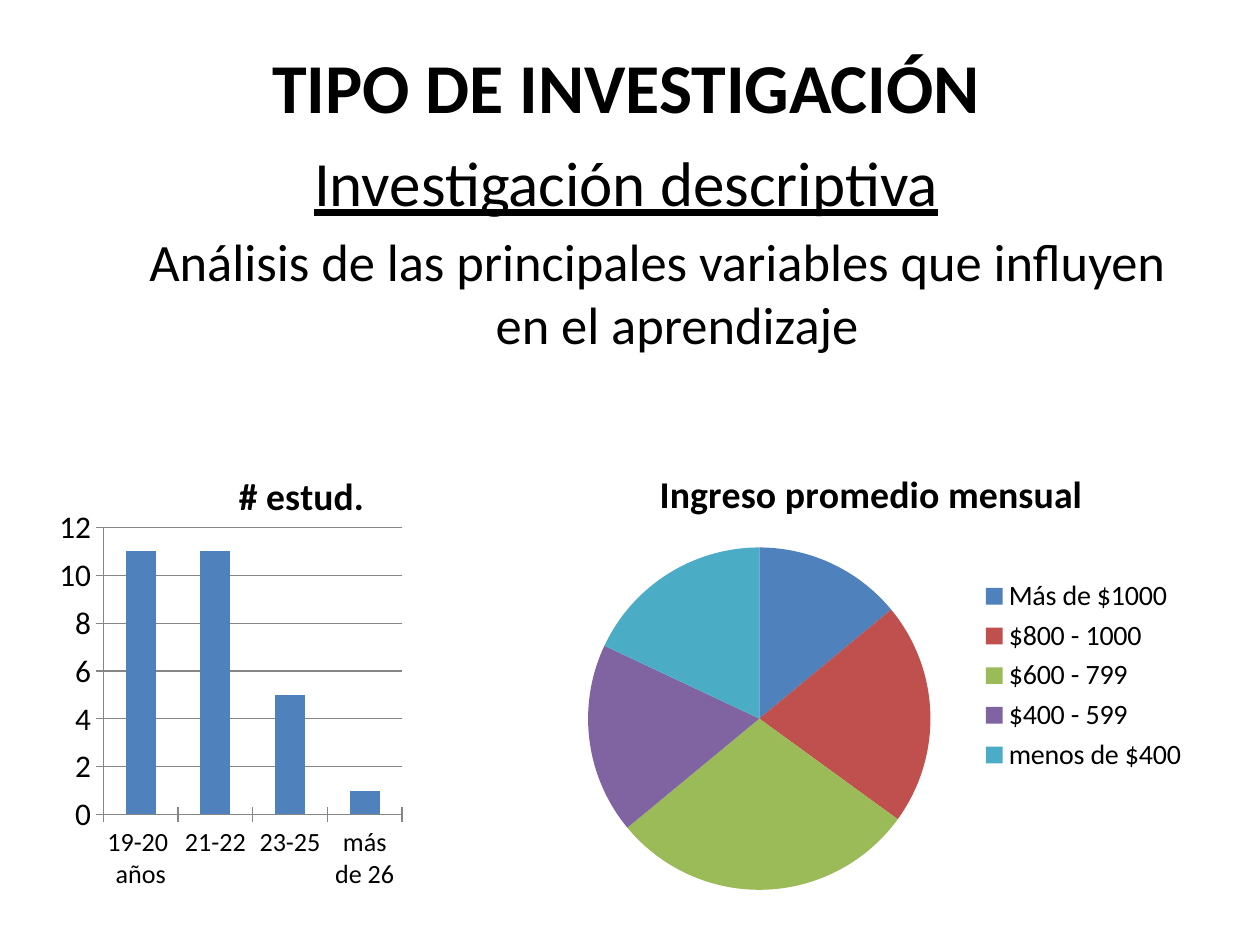
"""Build the research-type slide with a student bar chart and an income pie chart."""
from dataclasses import dataclass

import pptx
import pptx.chart.chart
import pptx.chart.data
import pptx.dml.color
import pptx.enum.chart
import pptx.enum.text
import pptx.oxml.ns
import pptx.slide
import pptx.text.text
import pptx.util
from lxml import etree

WIDTH, HEIGHT = pptx.util.Inches(10), pptx.util.Inches(7.5)
FONT = "Calibri"
BLACK = pptx.dml.color.RGBColor(0x00, 0x00, 0x00)
GRAY = pptx.dml.color.RGBColor(0x86, 0x86, 0x86)
BLUE = pptx.dml.color.RGBColor(0x4F, 0x81, 0xBD)
RED = pptx.dml.color.RGBColor(0xC0, 0x50, 0x4D)
GREEN = pptx.dml.color.RGBColor(0x9B, 0xBB, 0x59)
PURPLE = pptx.dml.color.RGBColor(0x80, 0x64, 0xA2)
AQUA = pptx.dml.color.RGBColor(0x4B, 0xAC, 0xC6)
KINDS = pptx.enum.chart.XL_CHART_TYPE


@dataclass(frozen=True)
class Area:
    """A rectangle given as shares of the slide's width and height."""
    left: float
    top: float
    width: float
    height: float

    def lengths(self) -> tuple[int, int, int, int]:
        """Return left, top, width and height as slide lengths."""
        return (int(self.left * WIDTH), int(self.top * HEIGHT),
                int(self.width * WIDTH), int(self.height * HEIGHT))


@dataclass(frozen=True)
class Line:
    """One centred paragraph and its look."""
    text: str
    size: int
    bold: bool = False
    underline: bool = False
    before: float = 0
    margin: float = 0
    indent: float = 0


@dataclass(frozen=True)
class Graph:
    """One single-series chart."""
    kind: KINDS
    area: Area
    title: str
    series: str
    categories: tuple[str, ...]
    values: tuple[int, ...]


HEADING = Area(0.047, 0.02, 0.9, 0.14)
BODY = Area(0.047, 0.145, 0.9, 0.81)
HEADING_LINES = [Line("TIPO DE INVESTIGACIÓN", 40, bold=True)]
BODY_LINES = [
    Line("Investigación descriptiva", 36, underline=True, margin=0.38, indent=-0.38),
    Line("Análisis de las principales variables que influyen en el aprendizaje",
         30, before=6, margin=0.81, indent=-0.31),
]
STUDENTS = Graph(KINDS.COLUMN_CLUSTERED, Area(0.047, 0.47, 0.367, 0.49),
                 "# estud.", "# estud.",
                 ("19-20  años", "21-22", "23-25", "más de 26"), (11, 11, 5, 1))
INCOME = Graph(KINDS.PIE, Area(0.43, 0.47, 0.523, 0.49),
               "Ingreso promedio mensual", "Series 1",
               ("Más de $1000", "$800 - 1000", "$600 - 799", "$400 - 599", "menos de $400"),
               (14, 21, 29, 18, 18))


def style_font(font: pptx.text.text.Font, size: float, bold: bool = False) -> None:
    """Apply the slide's typeface and colour."""
    font.name, font.size, font.bold = FONT, pptx.util.Pt(size), bold
    font.color.rgb = BLACK


def add_text(page: pptx.slide.Slide, area: Area, lines: list[Line],
             anchor: pptx.enum.text.MSO_ANCHOR) -> None:
    """Add a box of centred paragraphs."""
    frame = page.shapes.add_textbox(*area.lengths()).text_frame
    frame.word_wrap = True
    frame.vertical_anchor = anchor
    for index, line in enumerate(lines):
        para = frame.add_paragraph() if index else frame.paragraphs[0]
        para.text = line.text
        para.alignment = pptx.enum.text.PP_ALIGN.CENTER
        para.space_before = pptx.util.Pt(line.before)
        properties = para._p.get_or_add_pPr()
        properties.set("marL", str(pptx.util.Inches(line.margin)))
        properties.set("indent", str(pptx.util.Inches(line.indent)))
        style_font(para.font, line.size, line.bold)
        para.font.underline = line.underline


def add_graph(page: pptx.slide.Slide, graph: Graph) -> pptx.chart.chart.Chart:
    """Add a titled chart in the slide's typeface."""
    data = pptx.chart.data.CategoryChartData()
    data.categories = graph.categories
    data.add_series(graph.series, graph.values)
    chart = page.shapes.add_chart(graph.kind, *graph.area.lengths(), data).chart
    style_font(chart.font, 18)
    chart.has_title = True
    para = chart.chart_title.text_frame.paragraphs[0]
    para.text = graph.title
    style_font(para.font, 21.6, bold=True)
    chart.has_legend = False
    return chart


def set_layout(parent: etree._Element, shares: dict[str, float], inner: bool = False) -> None:
    """Place a chart part by shares of the chart's size."""
    name = pptx.oxml.ns.qn
    layout = parent.find(name("c:layout"))
    if layout is None:
        layout = etree.Element(name("c:layout"))
        parent.insert(0, layout)
    manual = etree.SubElement(layout, name("c:manualLayout"))
    if inner:
        etree.SubElement(manual, name("c:layoutTarget"), val="inner")
    for side in ("x", "y"):
        etree.SubElement(manual, name(f"c:{side}Mode"), val="edge")
    for side, share in shares.items():
        etree.SubElement(manual, name(f"c:{side}"), val=str(share))


def draw_students(page: pptx.slide.Slide) -> None:
    """Draw the column chart of students by age."""
    chart = add_graph(page, STUDENTS)
    set_layout(chart.chart_title._element, {"x": 0.37, "y": 0.04})
    set_layout(chart._chartSpace.chart.plotArea,
               {"x": 0.09, "y": 0.18, "w": 0.65, "h": 0.62}, inner=True)
    plot = chart.plots[0]
    plot.gap_width = 150
    plot.vary_by_categories = False
    fill = plot.series[0].format.fill
    fill.solid()
    fill.fore_color.rgb = BLUE
    chart.value_axis.maximum_scale = 12
    chart.value_axis.minimum_scale = 0
    chart.value_axis.major_unit = 2
    chart.value_axis.has_major_gridlines = True
    chart.value_axis.major_gridlines.format.line.color.rgb = GRAY
    for axis, size in ((chart.category_axis, 15), (chart.value_axis, 18)):
        axis.major_tick_mark = pptx.enum.chart.XL_TICK_MARK.CROSS
        axis.format.line.color.rgb = GRAY
        style_font(axis.tick_labels.font, size)


def draw_income(page: pptx.slide.Slide) -> None:
    """Draw the pie chart of monthly income."""
    chart = add_graph(page, INCOME)
    chart.has_legend = True
    chart.legend.position = pptx.enum.chart.XL_LEGEND_POSITION.RIGHT
    chart.legend.include_in_layout = False
    style_font(chart.legend.font, 16)
    plot = chart.plots[0]
    plot.vary_by_categories = True
    for index, color in enumerate((BLUE, RED, GREEN, PURPLE, AQUA)):
        fill = plot.series[0].points[index].format.fill
        fill.solid()
        fill.fore_color.rgb = color


def main() -> None:
    """Build and save the deck."""
    deck = pptx.Presentation()
    deck.slide_width, deck.slide_height = WIDTH, HEIGHT
    page = deck.slides.add_slide(deck.slide_layouts[6])
    add_text(page, HEADING, HEADING_LINES, pptx.enum.text.MSO_ANCHOR.MIDDLE)
    add_text(page, BODY, BODY_LINES, pptx.enum.text.MSO_ANCHOR.TOP)
    draw_students(page)
    draw_income(page)
    deck.save("out.pptx")


if __name__ == "__main__":
    main()
